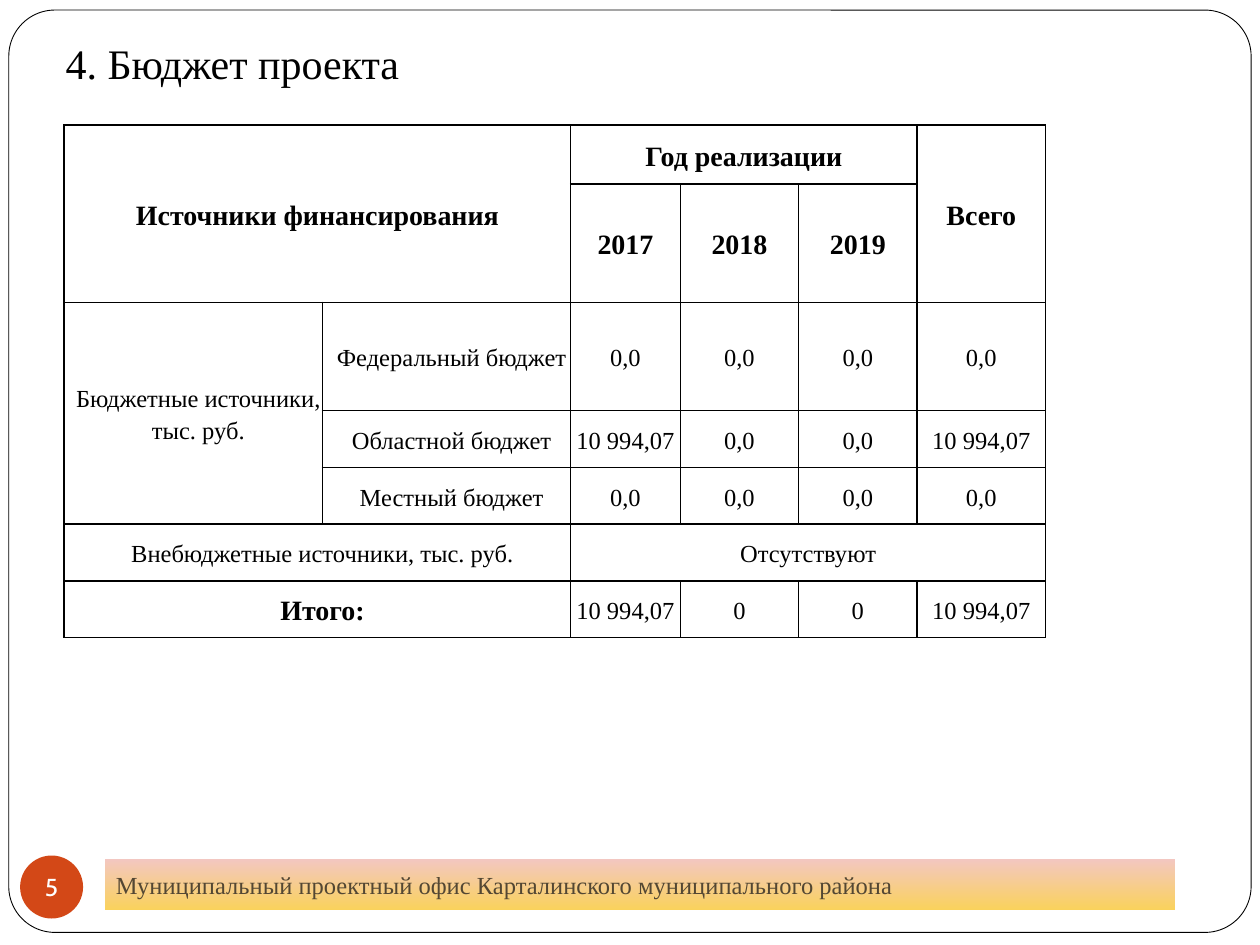
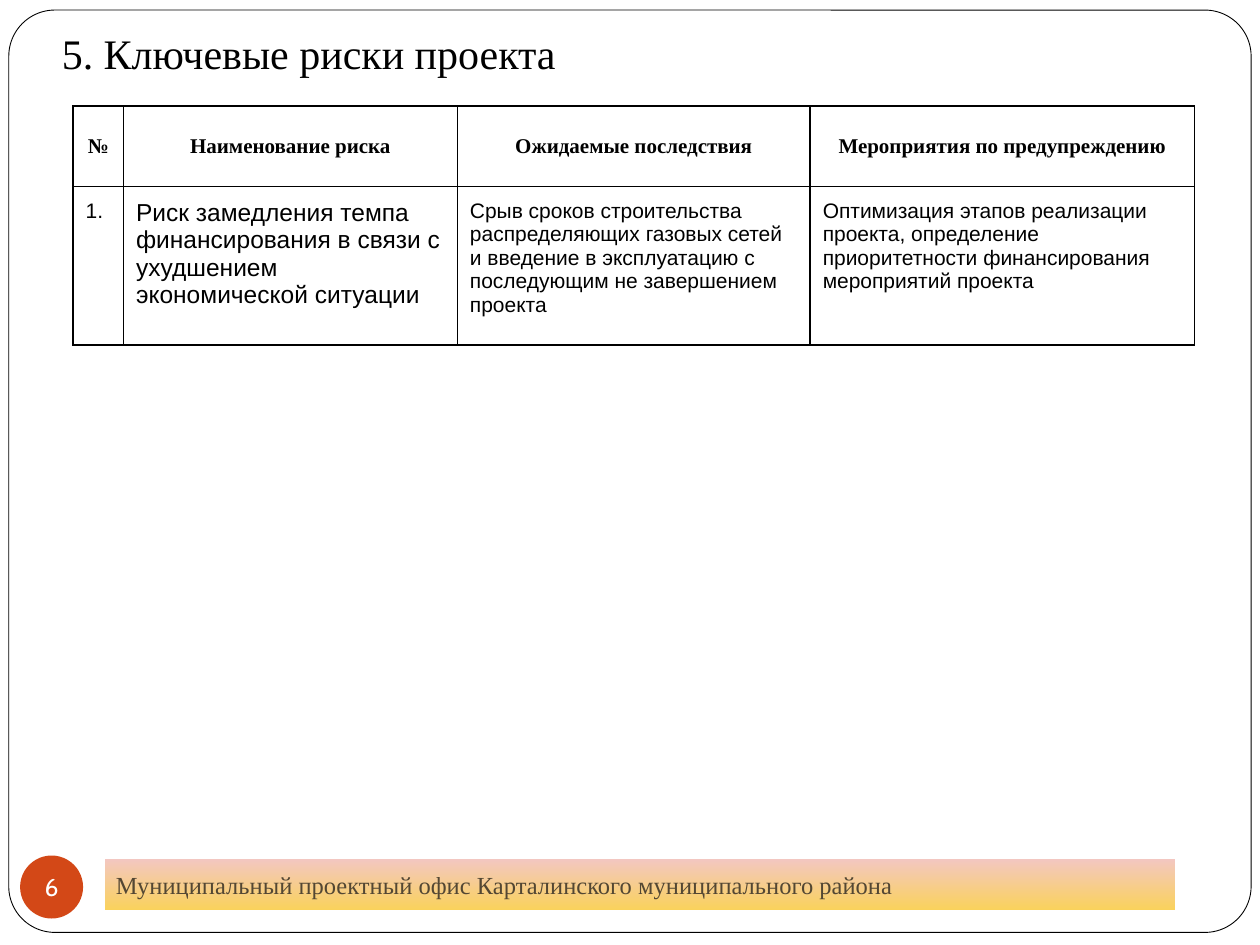
from lxml.etree import SubElement
from pptx import Presentation
from pptx.dml.color import RGBColor
from pptx.enum.shapes import MSO_SHAPE
from pptx.enum.text import MSO_ANCHOR, MSO_AUTO_SIZE, PP_ALIGN
from pptx.oxml.ns import qn
from pptx.util import Inches, Pt

SERIF, SANS, ROUND = "Times New Roman", "Arial", "Cabin"
BLACK, WHITE, RED, BROWN = "000000", "FFFFFF", "D34817", "534733"
PINK, GOLD = "F3C7C1", "FAD25C"
OFFICE = "Муниципальный проектный офис Карталинского муниципального района"

BUDGET = [
    ["Источники финансирования", "", "Год реализации", "", "", "Всего"],
    ["", "", "2017", "2018", "2019", ""],
    ["Бюджетные источники, тыс. руб.", "Федеральный бюджет"] + ["0,0"] * 4,
    ["", "Областной бюджет", "10 994,07", "0,0", "0,0", "10 994,07"],
    ["", "Местный бюджет"] + ["0,0"] * 4,
    ["Внебюджетные источники, тыс. руб.", "", "Отсутствуют", "", "", ""],
    ["Итого:", "", "10 994,07", "0", "0", "10 994,07"],
]
SPANS = [(0, 0, 1, 1), (0, 2, 0, 4), (0, 5, 1, 5), (2, 0, 4, 0),
         (5, 0, 5, 1), (5, 2, 5, 5), (6, 0, 6, 1)]
RISKS = [
    ["№", "Наименование риска", "Ожидаемые последствия",
     "Мероприятия по предупреждению"],
    ["1.",
     "Риск замедления темпа финансирования в связи с ухудшением "
     "экономической ситуации",
     "Срыв сроков строительства распределяющих газовых сетей и введение "
     "в эксплуатацию с последующим не завершением проекта",
     "Оптимизация этапов реализации проекта, определение приоритетности "
     "финансирования мероприятий проекта"],
]


def paint(fill, color):
    fill.solid()
    fill.fore_color.rgb = RGBColor.from_string(color)


def write(frame, text, size=14, font=SERIF, color=BLACK, bold=False,
          align=PP_ALIGN.LEFT, space=1.0, indent=0):
    para = frame.paragraphs[0]
    para.alignment = align
    para.line_spacing = space
    if indent:
        para._p.get_or_add_pPr().set("marL", str(Inches(indent)))
    run = para.add_run()
    run.text = text
    run.font.size, run.font.name, run.font.bold = Pt(size), font, bold
    run.font.color.rgb = RGBColor.from_string(color)


def inset(item, size):
    item.margin_left = item.margin_right = Inches(size)
    item.margin_top = item.margin_bottom = Inches(size)


def add_form(slide, kind, box):
    form = slide.shapes.add_shape(kind, *map(Inches, box))
    form.shadow.inherit = False
    form.line.fill.background()
    form.text_frame.vertical_anchor = MSO_ANCHOR.MIDDLE
    return form


def add_border(cell):
    props = cell._tc.get_or_add_tcPr()
    for side in ("lnL", "lnR", "lnT", "lnB"):
        line = SubElement(props, qn("a:" + side), w=str(Pt(1)))
        fill = SubElement(line, qn("a:solidFill"))
        SubElement(fill, qn("a:srgbClr"), val=BLACK)


def add_grid(slide, box, cols, rows, spans=()):
    left, top = box
    size = (left, top, sum(cols), sum(rows))
    table = slide.shapes.add_table(
        len(rows), len(cols), *map(Inches, size)).table
    table.first_row = table.horz_banding = False
    for col, width in zip(table.columns, cols):
        col.width = Inches(width)
    for row, height in zip(table.rows, rows):
        row.height = Inches(height)
    for cell in table.iter_cells():
        add_border(cell)
        paint(cell.fill, WHITE)
    for r1, c1, r2, c2 in spans:
        table.cell(r1, c1).merge(table.cell(r2, c2))
    return table


def add_frame(slide, box):
    frame = add_form(slide, MSO_SHAPE.ROUNDED_RECTANGLE, box)
    frame.adjustments[0] = 0.05
    paint(frame.fill, WHITE)
    paint(frame.line.fill, BLACK)
    frame.line.width = Pt(0.5)
    slide.shapes._spTree.insert(2, frame._element)


def add_title(slide, box, text):
    title = slide.shapes.title
    title.left, title.top, title.width, title.height = map(Inches, box)
    frame = title.text_frame
    frame.word_wrap = True
    frame.auto_size = MSO_AUTO_SIZE.NONE
    frame.vertical_anchor = MSO_ANCHOR.TOP
    inset(frame, 0.09)
    write(frame, text, size=24)


def add_badge(slide, box, number):
    badge = add_form(slide, MSO_SHAPE.OVAL, box)
    paint(badge.fill, RED)
    inset(badge.text_frame, 0)
    badge.text_frame.word_wrap = False
    write(badge.text_frame, str(number), font=ROUND, color=WHITE,
          align=PP_ALIGN.CENTER)


def add_band(slide, box):
    band = add_form(slide, MSO_SHAPE.RECTANGLE, box)
    band.fill.gradient()
    band.fill.gradient_angle = 270
    for stop, color in zip(band.fill.gradient_stops, (PINK, GOLD)):
        stop.color.rgb = RGBColor.from_string(color)
    inset(band.text_frame, 0.09)
    band.text_frame.word_wrap = True
    write(band.text_frame, OFFICE, color=BROWN)


def add_page(deck, number, title, box):
    slide = deck.slides.add_slide(deck.slide_layouts[5])
    add_frame(slide, (0.07, 0.08, 9.86, 7.32))
    add_title(slide, box, title)
    add_badge(slide, (0.16, 6.79, 0.5, 0.5), number)
    add_band(slide, (0.83, 6.82, 8.5, 0.4))
    return slide


def fill_budget(slide, box):
    cols = [2.05, 1.97, 0.87, 0.94, 0.94, 1.02]
    rows = [0.47, 0.94, 0.86] + [0.45] * 4
    table = add_grid(slide, box, cols, rows, SPANS)
    for r, line in enumerate(BUDGET):
        for c, text in enumerate(line):
            cell = table.cell(r, c)
            inset(cell, 0)
            cell.vertical_anchor = MSO_ANCHOR.MIDDLE
            if text:
                bold = r < 2 or text == "Итого:"
                write(cell.text_frame, text, size=16 if bold else 14,
                      bold=bold, align=PP_ALIGN.CENTER, space=1.15,
                      indent=0.08 if r > 1 and c < 2 else 0)


def fill_risks(slide, box):
    table = add_grid(slide, box, [0.4, 2.65, 2.8, 3.05], [0.64, 1.26])
    for r, line in enumerate(RISKS):
        head = r == 0
        for c, text in enumerate(line):
            cell = table.cell(r, c)
            inset(cell, 0.1)
            cell.vertical_anchor = MSO_ANCHOR.MIDDLE if head else MSO_ANCHOR.TOP
            write(cell.text_frame, text, bold=head,
                  size=14 if c == 1 and not head else 12,
                  font=SERIF if head else SANS,
                  align=PP_ALIGN.CENTER if head else PP_ALIGN.LEFT)


def main():
    deck = Presentation()
    deck.slide_width, deck.slide_height = Inches(10), Inches(7.5)
    budget = add_page(deck, 5, "4. Бюджет проекта", (0.43, 0.21, 7.69, 0.52))
    fill_budget(budget, (0.51, 0.99))
    risks = add_page(deck, 6, "5. Ключевые риски проекта",
                     (0.4, 0.13, 7.69, 0.52))
    fill_risks(risks, (0.58, 0.84))
    deck.save("out.pptx")


if __name__ == "__main__":
    main()
